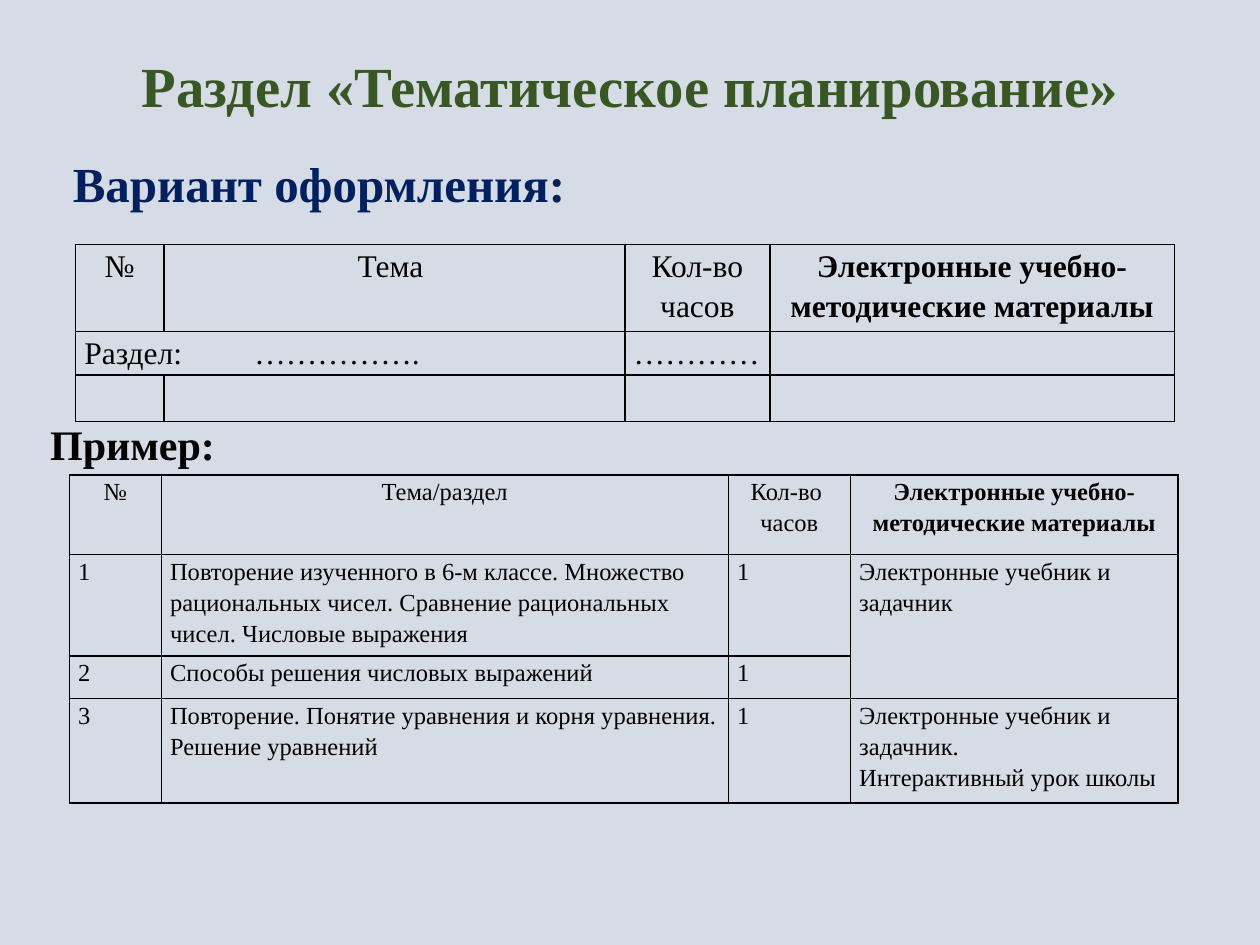
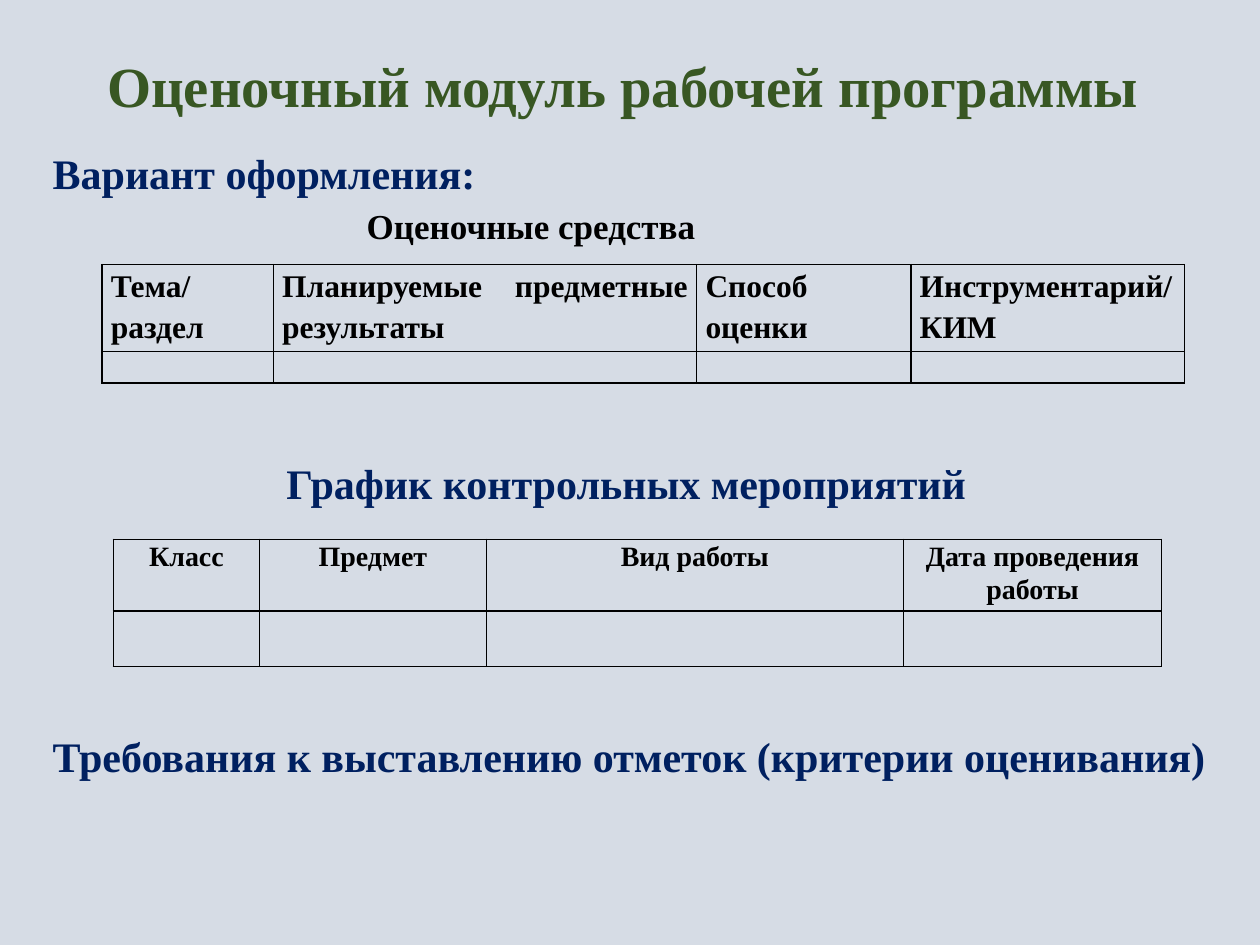
import dataclasses

import lxml.etree
import pptx
import pptx.dml.color
import pptx.enum.text
import pptx.oxml.ns
import pptx.util

Inches = pptx.util.Inches
Pt = pptx.util.Pt
qn = pptx.oxml.ns.qn
ALIGN = pptx.enum.text.PP_ALIGN
ANCHOR = pptx.enum.text.MSO_ANCHOR


@dataclasses.dataclass(frozen=True)
class Theme:
    font: str = "Times New Roman"
    background: str = "D6DCE5"
    title: str = "385723"
    heading: str = "002060"
    ink: str = "000000"
    title_size: float = 32.4
    large_size: int = 28
    heading_size: int = 24
    caption_size: int = 20
    table_size: int = 18
    schedule_size: int = 16
    example_size: int = 14
    empty_size: int = 12
    caption_gap: int = 4
    border: float = 1
    cell_margin: float = 0.07


THEME = Theme()
TITLE_BOX = (0.69, 0.32, 8.62, 0.78)


def rgb(value):
    return pptx.dml.color.RGBColor.from_string(value)


def add_span(para, text, size, color, bold=True):
    span = para.add_run()
    span.text = text
    span.font.name = THEME.font
    span.font.size = Pt(size)
    span.font.bold = bold
    span.font.color.rgb = rgb(color)


def add_page(deck, title):
    page = deck.slides.add_slide(deck.slide_layouts[5])
    box = page.shapes.title
    box.left, box.top, box.width, box.height = map(Inches, TITLE_BOX)
    frame = box.text_frame
    frame.auto_size = pptx.enum.text.MSO_AUTO_SIZE.NONE
    frame.vertical_anchor = ANCHOR.MIDDLE
    para = frame.paragraphs[0]
    para.alignment = ALIGN.CENTER
    para.line_spacing = 0.9
    add_span(para, title, THEME.title_size, THEME.title)
    return page


def add_heading(page, place, lines):
    box = page.shapes.add_textbox(*map(Inches, place))
    frame = box.text_frame
    frame.word_wrap = True
    frame.vertical_anchor = ANCHOR.MIDDLE
    for index, (text, size, color, align) in enumerate(lines):
        para = frame.add_paragraph() if index else frame.paragraphs[0]
        para.alignment = align
        para.space_before = Pt(THEME.caption_gap if index else 0)
        add_span(para, text, size, color)


def format_cell(cell):
    cell.margin_left = cell.margin_right = Inches(THEME.cell_margin)
    cell.margin_top = cell.margin_bottom = 0
    properties = cell._tc.get_or_add_tcPr()
    for side in ("lnL", "lnR", "lnT", "lnB"):
        line = lxml.etree.SubElement(properties, qn(f"a:{side}"), w=str(Pt(THEME.border)))
        fill = lxml.etree.SubElement(line, qn("a:solidFill"))
        lxml.etree.SubElement(fill, qn("a:srgbClr"), val=THEME.ink)
    cell.fill.background()


def fill_cell(cell, text, size, align, bold, spacing):
    if not text:
        lxml.etree.SubElement(cell.text_frame.paragraphs[0]._p, qn("a:endParaRPr"),
                              sz=str(THEME.empty_size * 100))
        return
    for index, line in enumerate(text.split("\n")):
        para = cell.text_frame.add_paragraph() if index else cell.text_frame.paragraphs[0]
        para.alignment = align
        para.line_spacing = spacing
        add_span(para, line, size, THEME.ink, bold)


def add_grid(page, corner, columns, heights, texts, size, head_align=ALIGN.CENTER,
             bold_heads=(), merges=(), spacing=1.15):
    place = (*corner, sum(columns), sum(heights))
    table = page.shapes.add_table(len(heights), len(columns), *map(Inches, place)).table
    table.first_row = table.horz_banding = False
    for column, width in zip(table.columns, columns):
        column.width = Inches(width)
    for row, height in zip(table.rows, heights):
        row.height = Inches(height)
    for row_index, row_texts in enumerate(texts):
        for column_index, text in enumerate(row_texts):
            cell = table.cell(row_index, column_index)
            is_head = row_index == 0
            format_cell(cell)
            fill_cell(cell, text, size, head_align if is_head else ALIGN.LEFT,
                      is_head and column_index in bold_heads, spacing)
    for first, last in merges:
        table.cell(*first).merge(table.cell(*last))
    return table


def set_tab(para, position):
    tabs = lxml.etree.SubElement(para._p.get_or_add_pPr(), qn("a:tabLst"))
    lxml.etree.SubElement(tabs, qn("a:tab"), pos=str(Inches(position)), algn="l")


def build_planning(deck):
    page = add_page(deck, "Раздел «Тематическое планирование»")
    add_heading(page, (0.48, 1.2, 8.9, 0.5),
                [("Вариант оформления:", THEME.large_size, THEME.heading, ALIGN.LEFT)])
    materials = "Электронные учебно-методические материалы"
    table = add_grid(
        page, (0.6, 1.94), (0.7, 3.66, 1.15, 3.21), (0.63, 0.32, 0.37),
        [("№", "Тема ", "Кол-во часов", materials),
         ("Раздел:\t…………….", "", "…………", ""),
         ("",) * 4],
        THEME.table_size, bold_heads=(3,), merges=[((1, 0), (1, 1))])
    set_tab(table.cell(1, 0).text_frame.paragraphs[0], 1.35)

    add_heading(page, (0.3, 3.27, 9.1, 0.5),
                [("Пример:", THEME.heading_size, THEME.ink, ALIGN.LEFT)])
    add_grid(
        page, (0.55, 3.77), (0.73, 4.5, 0.97, 2.6), (0.63, 0.77, 0.34, 0.83),
        [("№", "Тема/раздел", "Кол-во \nчасов", materials),
         ("1", "Повторение изученного в 6-м классе. Множество рациональных чисел. "
               "Сравнение рациональных чисел. Числовые выражения", "1",
          "Электронные учебник и задачник"),
         ("2", "Способы решения числовых выражений", "1", ""),
         ("3", "Повторение. Понятие уравнения и корня уравнения. Решение уравнений", "1",
          "Электронные учебник и задачник.\nИнтерактивный урок школы")],
        THEME.example_size, bold_heads=(3,), merges=[((1, 3), (2, 3))])


def build_assessment(deck):
    page = add_page(deck, "Оценочный модуль рабочей программы ")
    add_heading(page, (0.32, 1.11, 7.79, 0.91),
                [("Вариант оформления:", THEME.heading_size, THEME.heading, ALIGN.LEFT),
                 ("Оценочные средства", THEME.caption_size, THEME.ink, ALIGN.CENTER)])
    add_grid(
        page, (0.81, 2.1), (1.36, 3.36, 1.7, 2.17), (0.63, 0.25),
        [("Тема/\nраздел", "Планируемые предметные результаты", "Способ оценки",
          "Инструментарий/\nКИМ"),
         ("",) * 4],
        THEME.table_size, head_align=ALIGN.JUSTIFY, bold_heads=range(4))

    add_heading(page, (0.28, 3.58, 9.38, 0.5),
                [("График контрольных мероприятий", THEME.heading_size, THEME.heading,
                  ALIGN.CENTER)])
    add_grid(
        page, (0.9, 4.28), (1.16, 1.8, 3.31, 2.05), (0.57, 0.44),
        [("Класс", "Предмет", "Вид работы", "Дата проведения работы"),
         ("",) * 4],
        THEME.schedule_size, bold_heads=range(4), spacing=1.06)

    add_heading(page, (0.32, 5.75, 9.37, 0.5),
                [("Требования к выставлению отметок (критерии оценивания)",
                  THEME.heading_size, THEME.heading, ALIGN.LEFT)])


def main():
    deck = pptx.Presentation()
    deck.slide_width = Inches(10)
    deck.slide_height = Inches(7.5)
    background = deck.slide_master.background.fill
    background.solid()
    background.fore_color.rgb = rgb(THEME.background)
    build_planning(deck)
    build_assessment(deck)
    deck.save("out.pptx")


if __name__ == "__main__":
    main()
